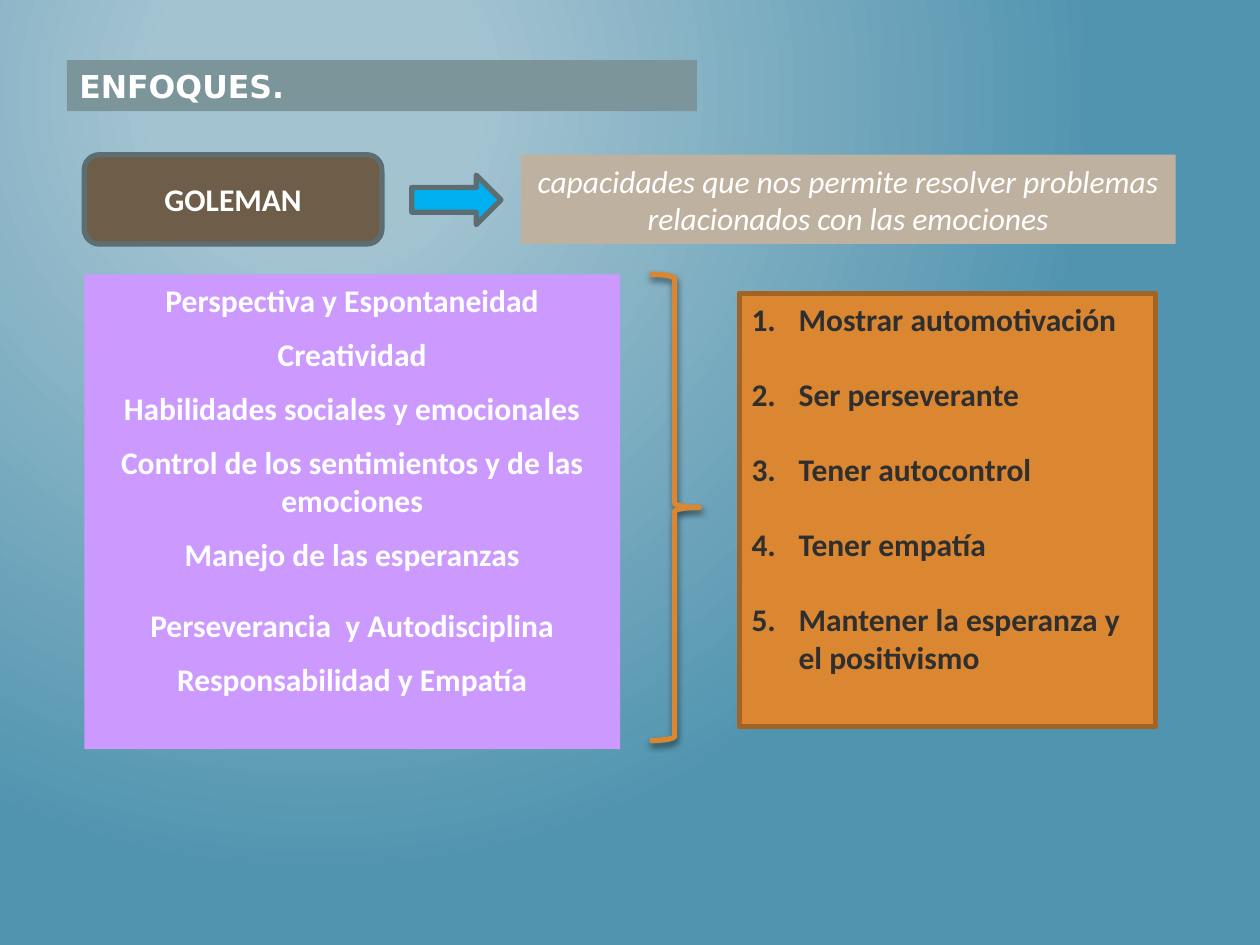
from lxml import etree
from pptx import Presentation
from pptx.dml.color import RGBColor
from pptx.enum.shapes import MSO_SHAPE
from pptx.enum.text import MSO_ANCHOR, MSO_AUTO_SIZE, PP_ALIGN
from pptx.oxml.ns import qn
from pptx.util import Cm, Pt

LEFT, CENTER = PP_ALIGN.LEFT, PP_ALIGN.CENTER
TOP, MIDDLE = MSO_ANCHOR.TOP, MSO_ANCHOR.MIDDLE
FIXED = MSO_AUTO_SIZE.NONE
ROUNDED, RECTANGLE = MSO_SHAPE.ROUNDED_RECTANGLE, MSO_SHAPE.RECTANGLE
ARROW, BRACE = MSO_SHAPE.RIGHT_ARROW, MSO_SHAPE.RIGHT_BRACE

WHITE = RGBColor(0xFF, 0xFF, 0xFF)
DARK = RGBColor(0x2F, 0x2F, 0x2F)
BLACK = RGBColor(0x00, 0x00, 0x00)
SKY = RGBColor(0xA3, 0xC3, 0xD1)
SEA = RGBColor(0x51, 0x94, 0xAF)
GREY = RGBColor(0x7C, 0x95, 0x9A)
SLATE = RGBColor(0x5C, 0x6E, 0x72)
BROWN = RGBColor(0x6E, 0x5D, 0x49)
SAND = RGBColor(0xBF, 0xB1, 0x9F)
LILAC = RGBColor(0xCC, 0x99, 0xFF)
ORANGE = RGBColor(0xDB, 0x86, 0x31)
RUST = RGBColor(0xA2, 0x63, 0x24)
CYAN = RGBColor(0x00, 0xB0, 0xF0)

SKILLS = [
    "Perspectiva y Espontaneidad",
    "Creatividad",
    "Habilidades sociales y emocionales",
    "Control de los sentimientos y de las emociones",
    "Manejo de las esperanzas",
    "Perseverancia  y Autodisciplina",
    "Responsabilidad y Empatía",
]
GOALS = [
    "Mostrar automotivación",
    "Ser perseverante",
    "Tener autocontrol",
    "Tener empatía",
    "Mantener la esperanza y el positivismo",
]


class SlideBuilder:
    text_format = {"name": "Calibri", "size": Pt(18), "bold": True, "italic": False}
    margins = {"margin_left": Cm(0.25), "margin_right": Cm(0.25),
               "margin_top": Cm(0.13), "margin_bottom": Cm(0.13)}
    line_width = Pt(3)

    def __init__(self, page):
        self.page = page

    def background(self, inner, outer):
        fill = self.page.background.fill
        fill.gradient()
        for stop, color, position in zip(fill.gradient_stops, (inner, outer), (0.2, 1)):
            stop.color.rgb = color
            stop.position = position
        gradient = self.page._element.find(".//" + qn("a:gradFill"))
        gradient.remove(gradient.find(qn("a:lin")))
        circle = etree.SubElement(gradient, qn("a:path"), path="circle")
        etree.SubElement(circle, qn("a:fillToRect"), l="50000", t="20000",
                         r="100000", b="100000")

    def paint(self, box, fill, line):
        if fill is None:
            box.fill.background()
        else:
            box.fill.solid()
            box.fill.fore_color.rgb = fill
        if line is None:
            box.line.fill.background()
        else:
            box.line.color.rgb = line
            box.line.width = self.line_width

    def set_text(self, box, texts, color=WHITE, align=CENTER, anchor=MIDDLE, **changes):
        frame = box.text_frame
        frame.text = "\n".join(texts)
        frame_format = {"word_wrap": True, "auto_size": FIXED, "vertical_anchor": anchor}
        for name, value in {**frame_format, **self.margins}.items():
            setattr(frame, name, value)
        for para in frame.paragraphs:
            para.alignment = align
            para.space_before = Pt(0)
            for span in para.runs:
                span.font.color.rgb = color
                for name, value in {**self.text_format, **changes}.items():
                    setattr(span.font, name, value)

    def shape(self, kind, area, fill=None, line=None):
        box = self.page.shapes.add_shape(kind, *map(Cm, area))
        box.shadow.inherit = False
        self.paint(box, fill, line)
        return box

    def placeholder(self, index, area, fill, line=None):
        box = self.page.placeholders[index]
        box.left, box.top, box.width, box.height = map(Cm, area)
        self.paint(box, fill, line)
        return box

    def list_box(self, index, area, fill, texts, gap, line=None, numbered=False, **style):
        box = self.placeholder(index, area, fill, line)
        self.set_text(box, texts, anchor=TOP, **style)
        indent = Cm(0.95) if numbered else 0
        for para in box.text_frame.paragraphs:
            para.space_after = gap
            properties = para._p.get_or_add_pPr()
            properties.set("marL", str(indent))
            properties.set("indent", str(-indent))
            if numbered:
                etree.SubElement(properties, qn("a:buFont"), typeface="+mj-lt")
                etree.SubElement(properties, qn("a:buAutoNum"), type="arabicPeriod")
            else:
                etree.SubElement(properties, qn("a:buNone"))
        return box

    def drop_shadow(self, box):
        effects = box._element.spPr.find(qn("a:effectLst"))
        shadow = etree.SubElement(effects, qn("a:outerShdw"), blurRad=str(Pt(4)),
                                  dist=str(Pt(2)), dir="5400000", rotWithShape="0")
        color = etree.SubElement(shadow, qn("a:srgbClr"), val=str(BLACK))
        etree.SubElement(color, qn("a:alpha"), val="55000")


def main():
    deck = Presentation()
    deck.slide_width, deck.slide_height = Cm(25.4), Cm(19.05)
    builder = SlideBuilder(deck.slides.add_slide(deck.slide_layouts[3]))
    builder.background(SKY, SEA)

    title = builder.placeholder(0, (1.35, 1.21, 12.7, 1.03), GREY)
    builder.set_text(title, ["ENFOQUES."], align=LEFT, name="DejaVu Sans")

    author = builder.shape(ROUNDED, (1.7, 3.12, 6, 1.8), BROWN, SLATE)
    builder.set_text(author, ["GOLEMAN"])
    builder.shape(ARROW, (8.3, 3.53, 1.8, 1), CYAN, SLATE)
    definition = builder.shape(RECTANGLE, (10.5, 3.12, 13.2, 1.8), SAND)
    builder.set_text(
        definition,
        ["capacidades que nos permite resolver problemas relacionados con las emociones"],
        bold=False, italic=True)

    skills = builder.list_box(1, (1.7, 5.53, 10.8, 9.57), LILAC, SKILLS, Pt(9.3))
    skills.text_frame.paragraphs[4].space_after = Pt(19)
    brace = builder.shape(BRACE, (13.1, 5.53, 1, 9.4), line=ORANGE)
    builder.drop_shadow(brace)
    builder.list_box(2, (14.9, 5.92, 8.4, 8.72), ORANGE, GOALS, Pt(21.3), line=RUST,
                     numbered=True, color=DARK, align=LEFT)

    deck.save("out.pptx")


if __name__ == "__main__":
    main()
